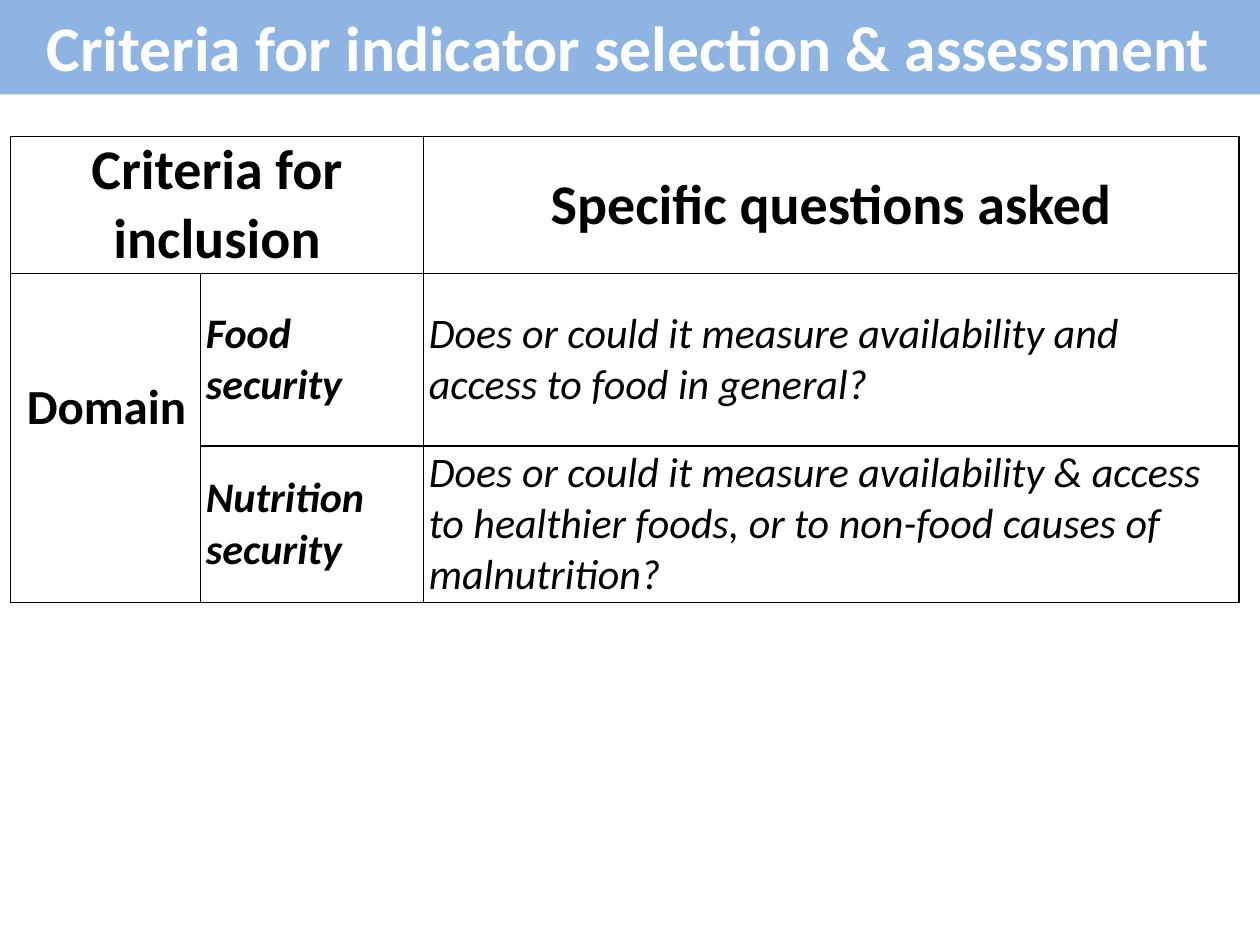
from lxml.etree import SubElement
from pptx import Presentation
from pptx.dml.color import RGBColor
from pptx.enum.shapes import MSO_SHAPE
from pptx.enum.text import MSO_ANCHOR, PP_ALIGN
from pptx.oxml.ns import qn
from pptx.util import Pt

TITLE = "Criteria for indicator selection & assessment"
HEADER = {"size": 32, "bold": True, "align": PP_ALIGN.CENTER}
DOMAIN = {"size": 28, "bold": True}
CRITERION = {"size": 24, "bold": True, "italic": True}
QUESTION = {"size": 24, "italic": True}
ENTRIES = [
    (0, 0, "Criteria for inclusion", HEADER),
    (0, 2, "Specific questions asked", HEADER),
    (1, 0, "Domain", DOMAIN),
    (1, 1, "Food security", CRITERION),
    (1, 2, "Does or could it measure availability and access to food in general?", QUESTION),
    (2, 1, "Nutrition security", CRITERION),
    (2, 2, "Does or could it measure availability & access to healthier foods, "
           "or to non-food causes of malnutrition?", QUESTION),
]
MERGES = [((0, 0), (0, 1)), ((1, 0), (2, 0))]
COLUMN_WIDTHS = [108.7, 127.4, 465.9]
ROW_HEIGHTS = [78, 98.6, 89.3]
SIDE_MARGIN = 3
DOMAIN_INDENT = 6.3
DOMAIN_LIFT = 34


def color(value):
    return RGBColor.from_string(value)


def write(frame, text, size, bold=False, italic=False, align=PP_ALIGN.LEFT, ink="000000"):
    frame.text = text
    paragraph = frame.paragraphs[0]
    paragraph.alignment = align
    font = paragraph.font
    font.name, font.size, font.bold, font.italic = "Calibri", Pt(size), bold, italic
    font.color.rgb = color(ink)


def add_borders(cell):
    properties = cell._tc.get_or_add_tcPr()
    for position, side in enumerate(("a:lnL", "a:lnR", "a:lnT", "a:lnB")):
        border = SubElement(properties, qn(side), w=str(Pt(1)))
        fill = SubElement(border, qn("a:solidFill"))
        SubElement(fill, qn("a:srgbClr"), val="000000")
        properties.insert(position, border)


def add_banner(slide):
    banner = slide.shapes.add_shape(MSO_SHAPE.RECTANGLE, Pt(-1.5), Pt(-1.5), Pt(721.5), Pt(55.5))
    banner.shadow.inherit = False
    banner.fill.solid()
    banner.fill.fore_color.rgb = color("8EB4E3")
    banner.line.fill.background()
    frame = banner.text_frame
    frame.word_wrap = True
    frame.vertical_anchor = MSO_ANCHOR.MIDDLE
    write(frame, TITLE, 36.3, bold=True, align=PP_ALIGN.CENTER, ink="FFFFFF")


def add_criteria(slide):
    criteria = slide.shapes.add_table(
        len(ROW_HEIGHTS), len(COLUMN_WIDTHS), Pt(6), Pt(78),
        Pt(sum(COLUMN_WIDTHS)), Pt(sum(ROW_HEIGHTS))).table
    criteria.first_row = criteria.horz_banding = False
    for column, width in zip(criteria.columns, COLUMN_WIDTHS):
        column.width = Pt(width)
    for row, height in zip(criteria.rows, ROW_HEIGHTS):
        row.height = Pt(height)
    for cell in criteria.iter_cells():
        cell.fill.background()
        cell.vertical_anchor = MSO_ANCHOR.MIDDLE
        cell.margin_left = cell.margin_right = Pt(SIDE_MARGIN)
        cell.margin_top = cell.margin_bottom = 0
        add_borders(cell)
    for start, end in MERGES:
        criteria.cell(*start).merge(criteria.cell(*end))
    for row, column, text, style in ENTRIES:
        write(criteria.cell(row, column).text_frame, text, **style)
    domain = criteria.cell(1, 0)
    domain.margin_left = Pt(SIDE_MARGIN + DOMAIN_INDENT)
    domain.margin_bottom = Pt(DOMAIN_LIFT)


def main():
    deck = Presentation()
    deck.slide_width, deck.slide_height = Pt(720), Pt(540)
    slide = deck.slides.add_slide(deck.slide_layouts[6])
    add_banner(slide)
    add_criteria(slide)
    deck.save("out.pptx")


if __name__ == "__main__":
    main()
